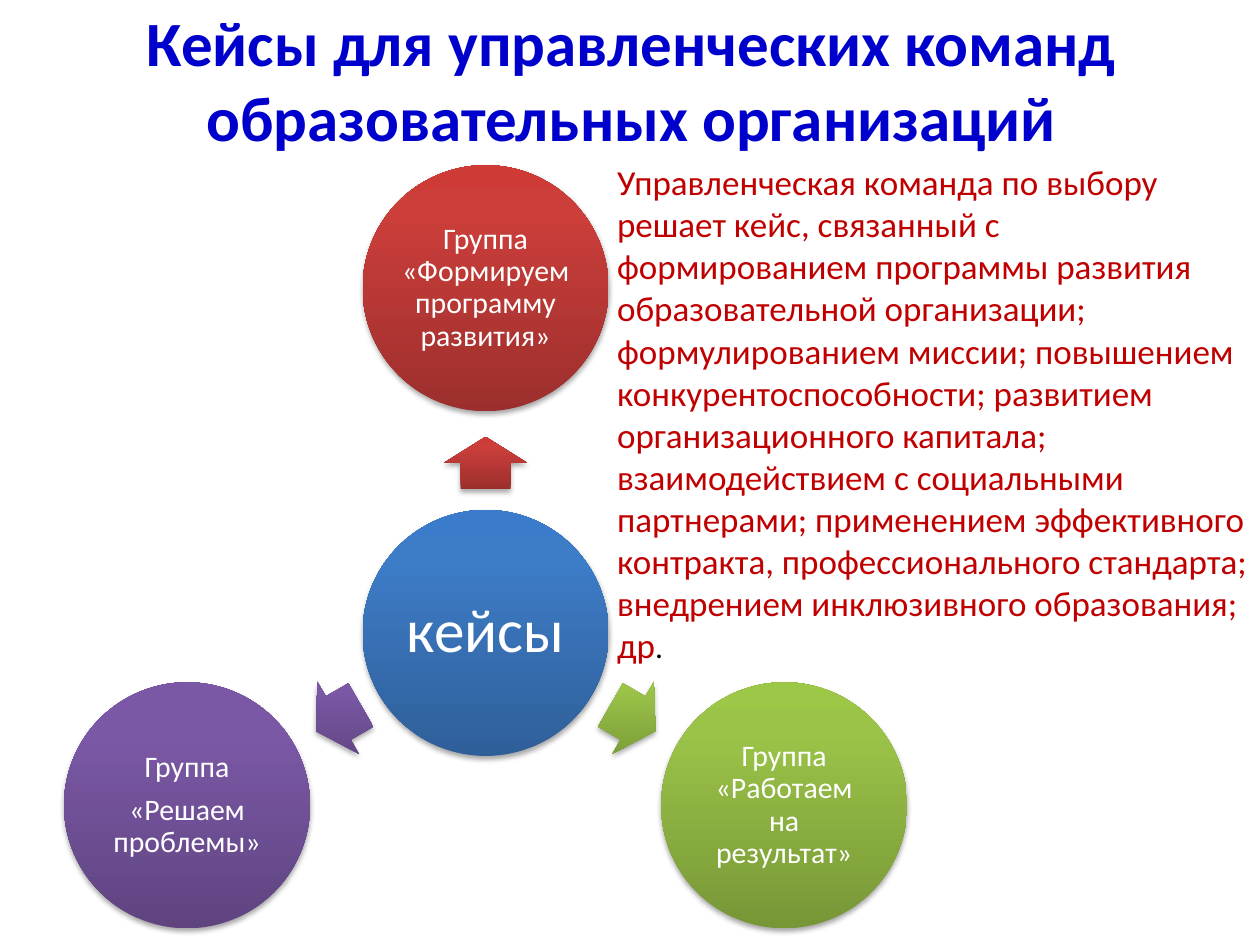
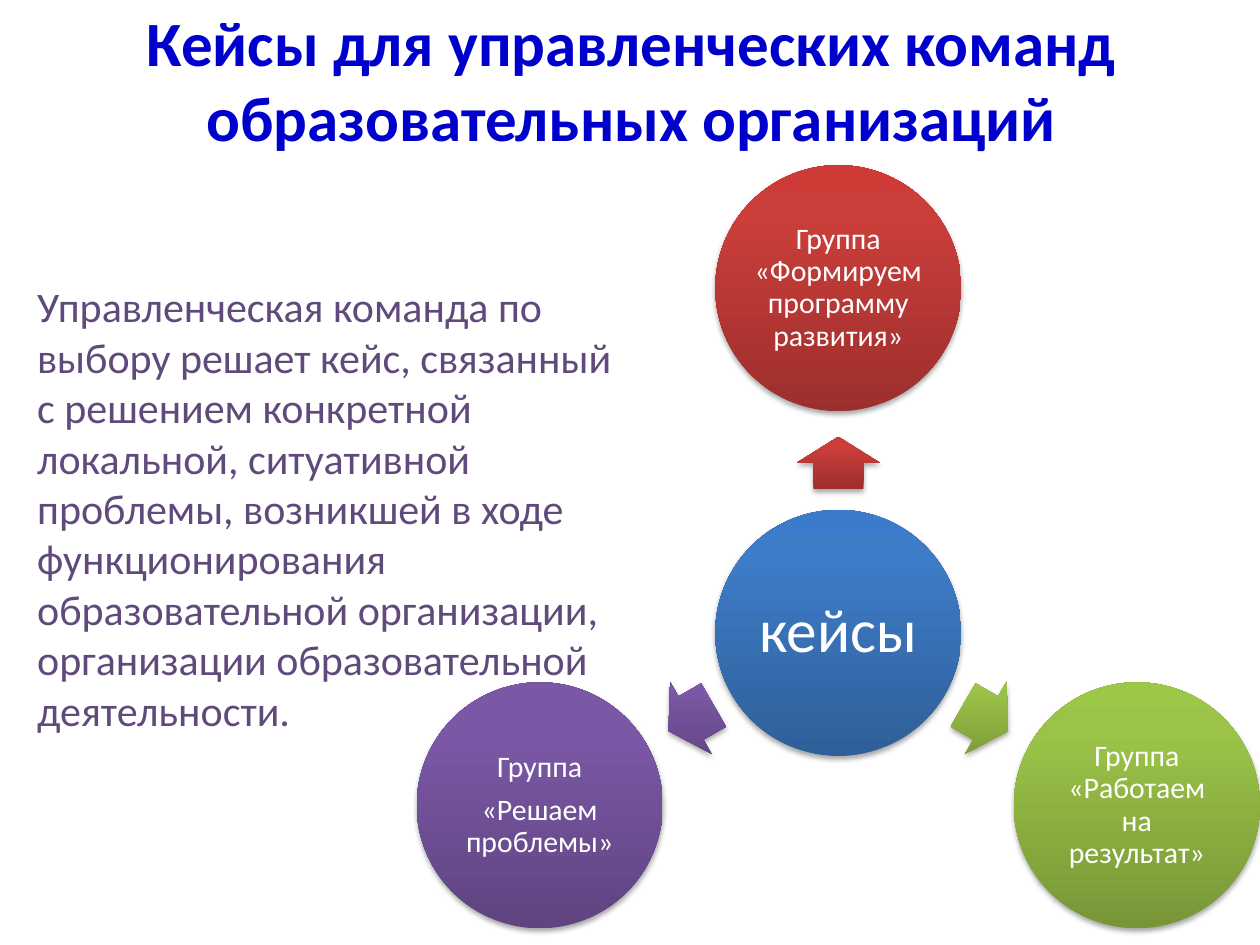
from math import cos, radians, sin

from lxml.etree import SubElement
from pptx import Presentation
from pptx.dml.color import RGBColor
from pptx.enum.shapes import MSO_SHAPE
from pptx.enum.text import MSO_ANCHOR, PP_ALIGN
from pptx.oxml.ns import qn
from pptx.util import Cm, Pt

FONT = "Calibri"
COLORS = {
    "title": "0000CC",
    "development": "C00000",
    "problems": "604A7B",
    "white": "FFFFFF",
    "black": "000000",
}
# Gradient stops from the dark bottom edge to the light top edge
GRADIENTS = {
    "blue": ("2F5F99", "3D7CC7", "3A7CCB"),
    "red": ("9C2F2D", "CB3E3A", "CE3B37"),
    "green": ("779737", "9BC348", "9DC746"),
    "purple": ("5F4480", "7B58A6", "7C57A8"),
}
STOPS = (0, 80000, 100000)

TITLE = "Кейсы для управленческих команд образовательных организаций"
# Direction in degrees (clockwise from the right), colour, paragraphs
GROUPS = [
    (270, "red", ["Группа «Формируем программу развития»"]),
    (30, "green", ["Группа «Работаем на результат»"]),
    (150, "purple", ["Группа", "«Решаем проблемы»"]),
]
DEVELOPMENT_TEXT = (
    "Управленческая команда по выбору решает кейс, связанный с формированием "
    "программы развития образовательной организации; формулированием миссии; "
    "повышением конкурентоспособности; развитием организационного капитала; "
    "взаимодействием с социальными партнерами; применением эффективного контракта, "
    "профессионального стандарта; внедрением инклюзивного образования; др"
)
PROBLEMS_TEXT = (
    "Управленческая команда по выбору решает кейс, связанный с решением конкретной "
    "локальной, ситуативной проблемы, возникшей в ходе функционирования "
    "образовательной организации, организации образовательной деятельности."
)

# Diagram measures in centimetres
CIRCLE = 4.96
ORBIT = 6.95
ARROW_ORBIT = 3.43
ARROW_LENGTH, ARROW_WIDTH = 1.05, 1.68
HUB_Y = 12.76


def add_run(paragraph, text, size, color, bold=False):
    run = paragraph.add_run()
    run.text = text
    run.font.name = FONT
    run.font.size = Pt(size)
    run.font.bold = bold
    run.font.color.rgb = RGBColor.from_string(COLORS[color])


def write_text(shape, paragraphs, size=17, color="white", bold=False,
               align=PP_ALIGN.CENTER, anchor=MSO_ANCHOR.MIDDLE,
               line_spacing=1.0, gap=0, inset=None):
    frame = shape.text_frame
    frame.word_wrap = True
    frame.vertical_anchor = anchor
    if inset is not None:
        frame.margin_left = frame.margin_right = Cm(inset)
        frame.margin_top = frame.margin_bottom = Cm(inset)
    for index, text in enumerate(paragraphs):
        paragraph = frame.add_paragraph() if index else frame.paragraphs[0]
        paragraph.alignment = align
        paragraph.line_spacing = line_spacing
        paragraph.space_before = Pt(gap if index else 0)
        add_run(paragraph, text, size, color, bold)
    return frame


def add_text_box(slide, box, paragraphs, **text_format):
    shape = slide.shapes.add_textbox(*map(Cm, box))
    return write_text(shape, paragraphs, **text_format)


def add_color(parent, color):
    return SubElement(parent, qn("a:srgbClr"), val=color)


def add_glossy_shape(slide, kind, center, width, height, gradient):
    """Add a shape around its centre, with a vertical gradient and a soft shadow."""
    x, y = center
    shape = slide.shapes.add_shape(
        kind, Cm(x - width / 2), Cm(y - height / 2), Cm(width), Cm(height))
    shape.line.fill.background()
    properties = shape._element.spPr

    # Gradient fill, placed before the outline
    fill = SubElement(properties, qn("a:gradFill"), rotWithShape="0")
    stop_list = SubElement(fill, qn("a:gsLst"))
    for position, color in zip(STOPS, GRADIENTS[gradient]):
        add_color(SubElement(stop_list, qn("a:gs"), pos=str(position)), color)
    SubElement(fill, qn("a:lin"), ang="16200000", scaled="0")
    properties.find(qn("a:ln")).addprevious(fill)

    # Shadow straight below
    effects = SubElement(properties, qn("a:effectLst"))
    shadow = SubElement(effects, qn("a:outerShdw"), blurRad=str(Pt(3.1)),
                        dist=str(Pt(1.8)), dir="5400000", rotWithShape="0")
    SubElement(add_color(shadow, COLORS["black"]), qn("a:alpha"), val="35000")
    return shape


def add_circle(slide, center, gradient, paragraphs, size=17, inset=0.05):
    circle = add_glossy_shape(slide, MSO_SHAPE.OVAL, center, CIRCLE, CIRCLE, gradient)
    write_text(circle, paragraphs, size=size, line_spacing=0.9, gap=6, inset=inset)


def add_arrow(slide, center, angle, gradient):
    arrow = add_glossy_shape(slide, MSO_SHAPE.RIGHT_ARROW, center,
                             ARROW_LENGTH, ARROW_WIDTH, gradient)
    arrow.adjustments[0] = 0.6
    arrow.adjustments[1] = 0.5
    arrow.rotation = angle


def add_cases_diagram(slide, hub_x):
    """Draw the hub circle and the groups that radiate from it."""

    def around_hub(angle, distance):
        return (hub_x + distance * cos(radians(angle)),
                HUB_Y + distance * sin(radians(angle)))

    add_circle(slide, (hub_x, HUB_Y), "blue", ["кейсы"], size=35, inset=0.12)
    for angle, gradient, paragraphs in GROUPS:
        add_arrow(slide, around_hub(angle, ARROW_ORBIT), angle, gradient)
        add_circle(slide, around_hub(angle, ORBIT), gradient, paragraphs)


def add_cases_slide(presentation, hub_x, box, text, size, color):
    slide = presentation.slides.add_slide(presentation.slide_layouts[6])
    add_text_box(slide, (1.3, 0, 22.86, 3.18), [TITLE],
                 size=36, color="title", bold=True)
    add_cases_diagram(slide, hub_x)
    return add_text_box(slide, box, [text], size=size, color=color,
                        align=PP_ALIGN.LEFT, anchor=MSO_ANCHOR.TOP)


def main():
    presentation = Presentation()
    presentation.slide_width = Cm(25.4)
    presentation.slide_height = Cm(19.05)

    # Development programme cases
    frame = add_cases_slide(presentation, 9.79, (12.19, 3.12, 13.21, 9.2),
                            DEVELOPMENT_TEXT, 20, "development")
    add_run(frame.paragraphs[0], ".", 18, "black")

    # Problem-solving cases
    add_cases_slide(presentation, 16.9, (0.5, 5.54, 12.3, 9.8),
                    PROBLEMS_TEXT, 24, "problems")

    presentation.save("out.pptx")


if __name__ == "__main__":
    main()
